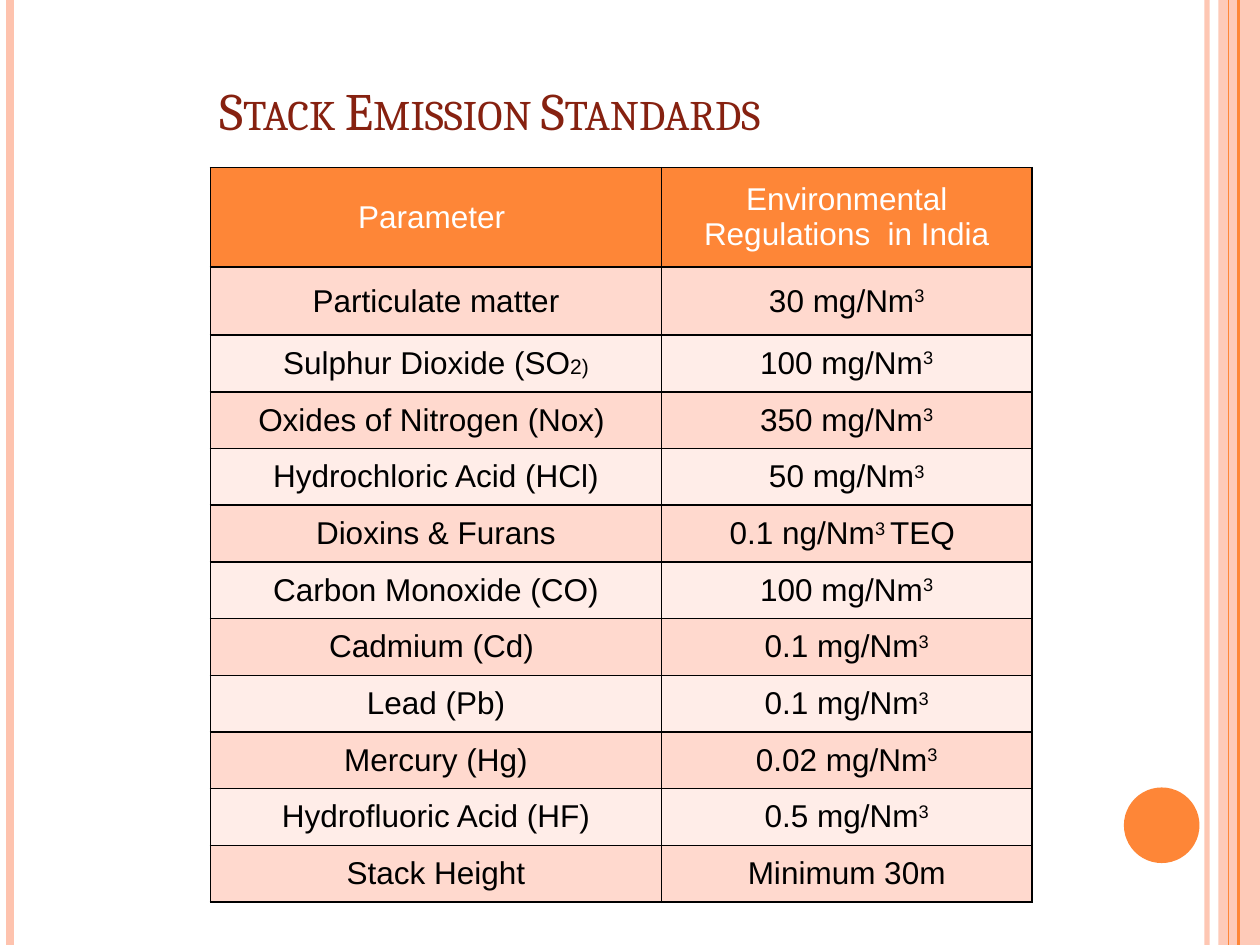
from dataclasses import dataclass

import pptx
import pptx.dml.color
import pptx.enum.shapes
import pptx.enum.text
import pptx.oxml
import pptx.oxml.ns
import pptx.util
from pptx.util import Inches

ORANGE, PINK = "FE8637", "FEC3AE"
BANDS = ("FFD9CE", "FFEDE8")
SUPER = 30000


@dataclass
class Rule:
    x: float
    color: str
    width: float
    alpha: int = 100


@dataclass
class Run:
    text: str
    size: float = 18
    baseline: int = 0


@dataclass
class Block:
    kind: pptx.enum.shapes.MSO_SHAPE
    box: tuple
    color: str
    alpha: int = 100


SHAPE = pptx.enum.shapes.MSO_SHAPE
DECOR = [
    Rule(9.58, PINK, 3, 93),
    Rule(0.08, PINK, 4.5),
    Block(SHAPE.RECTANGLE, (9.67, 0, 0.33, 7.5), PINK, 87),
    Rule(9.83, ORANGE, 1.5),
    Rule(9.75, ORANGE, 0.75),
    Block(SHAPE.OVAL, (8.92, 6.25, 0.6, 0.6), ORANGE),
]


def amount(value: str, unit: str = "mg") -> list[Run]:
    """A limit per normal cubic metre."""
    return [Run(f"{value} {unit}/Nm"), Run("3", baseline=SUPER)]


ROWS = [
    ([Run("Parameter ")], [Run("Environmental Regulations  in India")]),
    ([Run("Particulate matter")], amount("30")),
    ([Run("Sulphur Dioxide (SO"), Run("2)", 12)], amount("100")),
    ([Run("Oxides of Nitrogen (Nox) ")], amount("350")),
    ([Run("Hydrochloric Acid (HCl)")], amount("50")),
    ([Run("Dioxins & Furans")],
     amount("0.1", "ng") + [Run(" ", baseline=SUPER), Run("TEQ ")]),
    ([Run("Carbon Monoxide (CO)")], amount("100")),
    ([Run("Cadmium (Cd) ")], amount("0.1")),
    ([Run("Lead (Pb)")], amount("0.1")),
    ([Run("Mercury (Hg)")], amount("0.02")),
    ([Run("Hydrofluoric Acid (HF)")], amount("0.5")),
    ([Run("Stack Height")], [Run("Minimum 30m")]),
]
COL_WIDTHS = (3.58, 2.94)
ROW_HEIGHTS = [0.79, 0.54] + [0.45] * (len(ROWS) - 2)


def rgb(color: str) -> pptx.dml.color.RGBColor:
    return pptx.dml.color.RGBColor.from_string(color)


def set_attrs(obj, values: dict) -> None:
    for name, value in values.items():
        setattr(obj, name, value)


def add_child(parent, tag: str, **attrs):
    child = parent.makeelement(pptx.oxml.ns.qn(tag), attrs)
    parent.append(child)
    return child


def paint(fill, color: str, alpha: int = 100) -> None:
    fill.solid()
    fill.fore_color.rgb = rgb(color)
    if alpha < 100:
        clr = fill._xPr.find(".//" + pptx.oxml.ns.qn("a:srgbClr"))
        add_child(clr, "a:alpha", val=str(alpha * 1000))


def draw_rule(slide, rule: Rule) -> None:
    x = Inches(rule.x)
    line = slide.shapes.add_connector(
        pptx.enum.shapes.MSO_CONNECTOR.STRAIGHT, x, 0, x, Inches(7.5))
    line.line.width = pptx.util.Pt(rule.width)
    paint(line.line.fill, rule.color, rule.alpha)
    add_child(line._element.spPr, "a:effectLst")


def draw_block(slide, block: Block) -> None:
    sp = slide.shapes.add_shape(block.kind, *map(Inches, block.box))
    sp.shadow.inherit = False
    sp.line.fill.background()
    paint(sp.fill, block.color, block.alpha)


def draw_title(slide, text: str) -> None:
    title = slide.shapes.title
    place = dict(left=1.64, top=0.4, width=7.67, height=0.77)
    set_attrs(title, {name: Inches(v) for name, v in place.items()})
    tf = title.text_frame
    set_attrs(tf, dict(vertical_anchor=pptx.enum.text.MSO_ANCHOR.BOTTOM,
                       word_wrap=True))
    p = tf.paragraphs[0]
    p.alignment = pptx.enum.text.PP_ALIGN.LEFT
    r = p.add_run()
    r.text = text
    set_attrs(r.font, dict(name="Cambria", size=pptx.util.Pt(30)))
    r.font.color.rgb = rgb("862110")
    r.font._element.set("cap", "small")


def add_borders(cell) -> None:
    tc_pr = cell._tc.get_or_add_tcPr()
    for side in "LRTB":
        ln = add_child(tc_pr, f"a:ln{side}", w=str(pptx.util.Pt(1)))
        add_child(add_child(ln, "a:solidFill"), "a:srgbClr", val="000000")


def fill_cell(cell, runs: list[Run], text_color: str, fill: str) -> None:
    add_borders(cell)
    paint(cell.fill, fill)
    cell.vertical_anchor = pptx.enum.text.MSO_ANCHOR.MIDDLE
    p = cell.text_frame.paragraphs[0]
    p.alignment = pptx.enum.text.PP_ALIGN.CENTER
    for run in runs:
        r = p.add_run()
        r.text = run.text
        set_attrs(r.font, dict(name="Arial", size=pptx.util.Pt(run.size),
                               bold=False))
        r.font.color.rgb = rgb(text_color)
        if run.baseline:
            r.font._element.set("baseline", str(run.baseline))


def draw_table(slide) -> None:
    table = slide.shapes.add_table(
        len(ROWS), len(COL_WIDTHS), Inches(1.67), Inches(1.33),
        Inches(sum(COL_WIDTHS)), Inches(sum(ROW_HEIGHTS))).table
    for col, width in zip(table.columns, COL_WIDTHS):
        col.width = Inches(width)
    for i, (row, height) in enumerate(zip(table.rows, ROW_HEIGHTS)):
        row.height = Inches(height)
        text_color, fill = ("000000", BANDS[(i - 1) % 2]) if i else ("FFFFFF", ORANGE)
        for cell, runs in zip(row.cells, ROWS[i]):
            fill_cell(cell, runs, text_color, fill)


def main() -> None:
    prs = pptx.Presentation()
    set_attrs(prs, dict(slide_width=Inches(10), slide_height=Inches(7.5)))
    slide = prs.slides.add_slide(prs.slide_layouts.get_by_name("Title Only"))
    for item in DECOR:
        draw = draw_rule if isinstance(item, Rule) else draw_block
        draw(slide, item)
    draw_title(slide, "Stack Emission Standards")
    draw_table(slide)
    prs.save("out.pptx")


if __name__ == "__main__":
    main()
